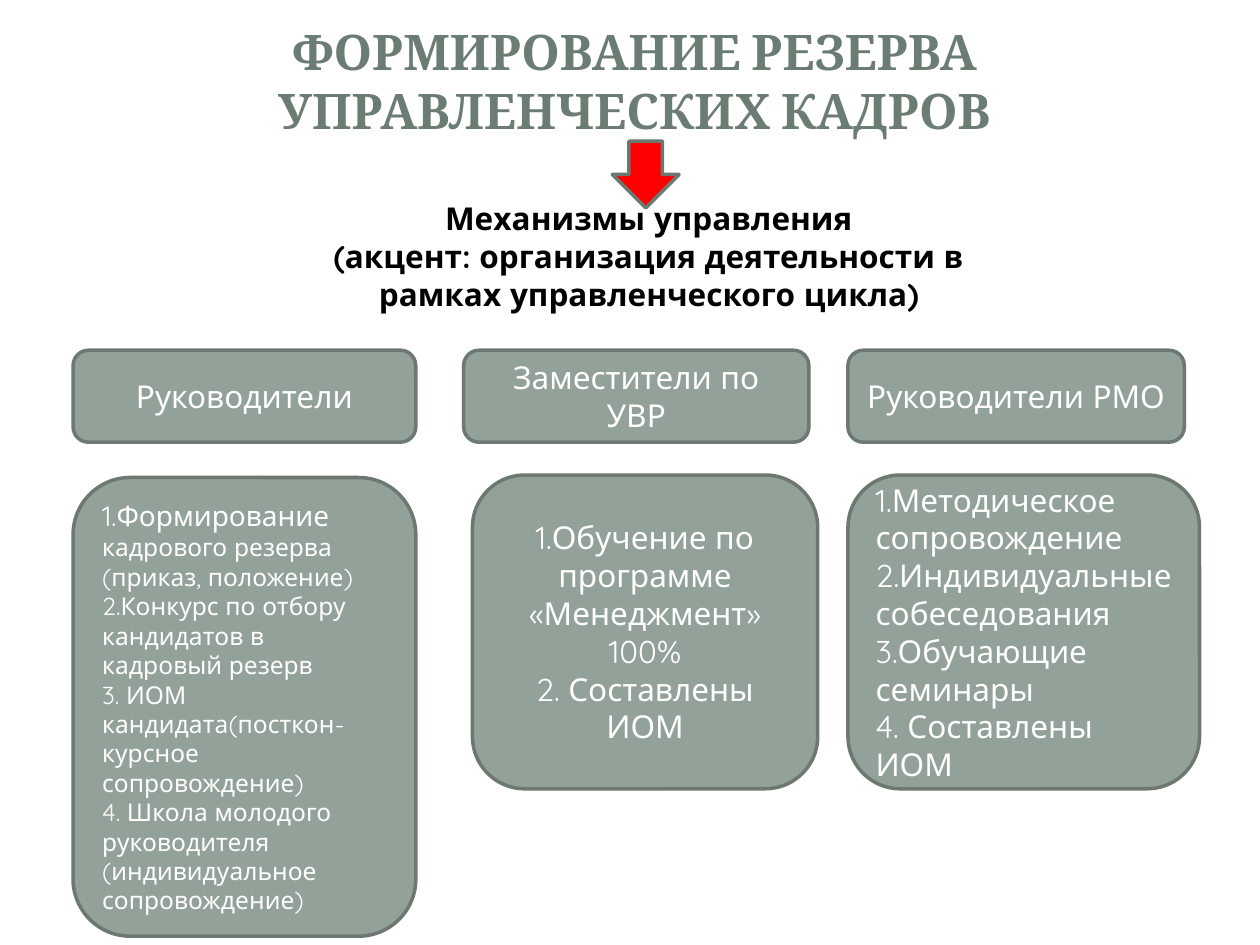
from dataclasses import dataclass

from pptx import Presentation
from pptx.dml.color import RGBColor as RGB
from pptx.enum.shapes import MSO_SHAPE as SHAPE
from pptx.enum.text import MSO_ANCHOR as ANCHOR, PP_ALIGN as ALIGN
from pptx.util import Inches, Pt


@dataclass(frozen=True)
class Theme:
    title: str = "6B7D72"
    text: str = "000000"
    card: str = "93A299"
    card_text: str = "FFFFFF"
    line: str = "6D7871"
    arrow: str = "FF0000"
    head_font: str = "Cambria"
    body_font: str = "Quicksand"
    title_size: int = 28
    body_size: int = 18
    lead_size: int = 16
    small_size: int = 14
    line_width: int = 2


T = Theme()

TITLE = "ФОРМИРОВАНИЕ РЕЗЕРВА УПРАВЛЕНЧЕСКИХ КАДРОВ"
SUBTITLE = [
    "Механизмы управления",
    "(акцент: организация деятельности в рамках управленческого цикла)",
]
COLUMNS = [
    {
        "head": "Руководители", "head_box": (0.58, 2.72),
        "body_box": (0.58, 3.79, 2.72, 3.64),
        "align": ALIGN.LEFT, "size": T.small_size,
        "items": [
            [("1.Формирование ", T.lead_size),
             ("кадрового резерва (приказ, положение)", T.small_size)],
            "2.Конкурс по отбору кандидатов в кадровый резерв",
            "3. ИОМ кандидата(посткон-курсное сопровождение)",
            "4. Школа молодого руководителя (индивидуальное сопровождение)",
        ],
    },
    {
        "head": "Заместители по УВР", "head_box": (3.68, 2.74),
        "body_box": (3.75, 3.77, 2.74, 2.49),
        "align": ALIGN.CENTER, "size": T.body_size,
        "items": [
            "1.Обучение по программе «Менеджмент» 100%",
            "2. Составлены ИОМ",
        ],
    },
    {
        "head": "Руководители РМО", "head_box": (6.73, 2.67),
        "body_box": (6.73, 3.77, 2.79, 2.49),
        "align": ALIGN.LEFT, "size": T.body_size,
        "items": [
            "1.Методическое сопровождение",
            "2.Индивидуальные собеседования",
            "3.Обучающие семинары",
            "4. Составлены ИОМ",
        ],
    },
]
HEAD_TOP, HEAD_HEIGHT = 2.78, 0.73


def write(s, items, size, color, align=ALIGN.CENTER, anchor=ANCHOR.MIDDLE,
          font=T.body_font, bold=False):
    """Fill a shape with one paragraph per item."""
    tf = s.text_frame
    for name, value in {"word_wrap": True, "vertical_anchor": anchor}.items():
        setattr(tf, name, value)
    for i, item in enumerate(items):
        p = tf.add_paragraph() if i else tf.paragraphs[0]
        p.alignment = align
        runs = [(item, size)] if isinstance(item, str) else item
        for text, points in runs:
            r = p.add_run()
            r.text = text
            for name, value in {"name": font, "size": Pt(points), "bold": bold}.items():
                setattr(r.font, name, value)
            r.font.color.rgb = RGB.from_string(color)


def add_box(slide, box, kind=SHAPE.ROUNDED_RECTANGLE, fill=T.card):
    """Add an outlined shape."""
    s = slide.shapes.add_shape(kind, *map(Inches, box))
    s.shadow.inherit = False
    s.fill.solid()
    s.fill.fore_color.rgb = RGB.from_string(fill)
    s.line.color.rgb = RGB.from_string(T.line)
    s.line.width = Pt(T.line_width)
    return s


def add_text(slide, box, items, size, color, **style):
    """Add a bold text box."""
    s = slide.shapes.add_textbox(*map(Inches, box))
    write(s, items, size, color, bold=True, **style)
    return s


def main():
    """Build and save the slide."""
    prs = Presentation()
    prs.slide_width, prs.slide_height = Inches(10), Inches(7.5)
    slide = prs.slides.add_slide(prs.slide_layouts[6])

    title = add_text(slide, (0.52, 0.27, 9.03, 1.21), [TITLE],
                     T.title_size, T.title, font=T.head_font)
    title.text_frame.margin_bottom = Inches(0.52)
    add_text(slide, (2.42, 1.53, 5.46, 1.01), SUBTITLE,
             T.body_size, T.text, anchor=ANCHOR.TOP)
    add_box(slide, (4.86, 1.12, 0.53, 0.53), SHAPE.DOWN_ARROW, T.arrow)

    for col in COLUMNS:
        left, width = col["head_box"]
        head = add_box(slide, (left, HEAD_TOP, width, HEAD_HEIGHT))
        write(head, [col["head"]], T.body_size, T.card_text)
        body = add_box(slide, col["body_box"])
        write(body, col["items"], col["size"], T.card_text, col["align"])

    prs.save("out.pptx")


if __name__ == "__main__":
    main()
